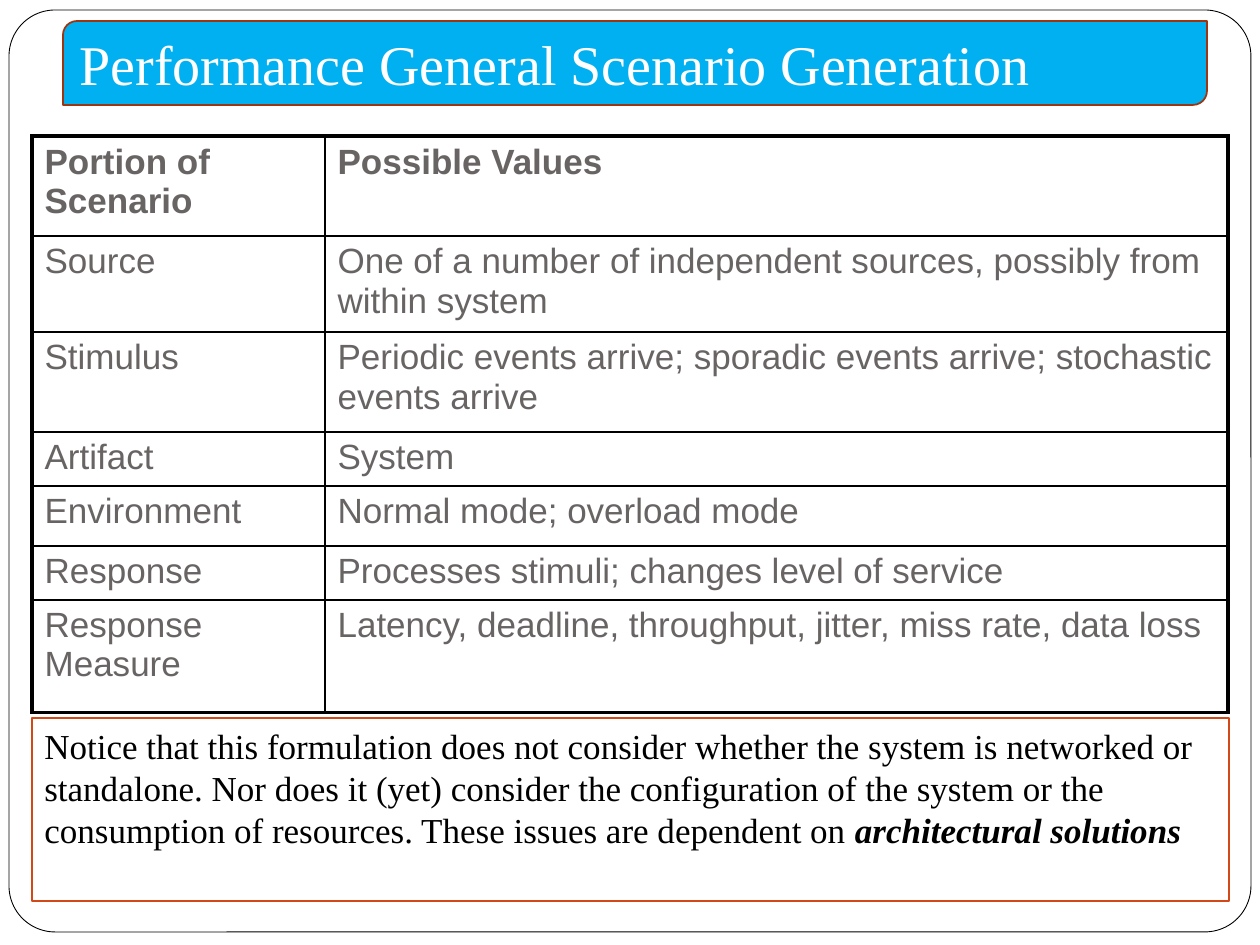
import pptx
import pptx.util
import pptx.dml.color
import pptx.enum.shapes
import pptx.enum.text
import pptx.oxml
import pptx.oxml.ns

RGB = pptx.dml.color.RGBColor
BLACK = RGB(0x00, 0x00, 0x00)
WHITE = RGB(0xFF, 0xFF, 0xFF)
GREY = RGB(0x69, 0x64, 0x64)
BLUE = RGB(0x00, 0xB0, 0xF0)
RUST = RGB(0x9C, 0x35, 0x11)
ORANGE = RGB(0xD3, 0x48, 0x17)
SERIF = "Times New Roman"
SANS = "Arial"
KINDS = pptx.enum.shapes.MSO_SHAPE
ANCHOR = pptx.enum.text.MSO_ANCHOR

ROWS = [
    (100, "Portion of Scenario", "Possible Values"),
    (96, "Source", "One of a number of independent sources, possibly from within system"),
    (100, "Stimulus", "Periodic events arrive; sporadic events arrive; stochastic events arrive"),
    (54, "Artifact", "System"),
    (60, "Environment", "Normal mode; overload mode"),
    (54, "Response", "Processes stimuli; changes level of service"),
    (113, "Response Measure", "Latency, deadline, throughput, jitter, miss rate, data loss"),
]
NOTE = (
    "Notice that this formulation does not consider whether the system is networked or "
    "standalone. Nor does it (yet) consider the configuration of the system or the "
    "consumption of resources. These issues are dependent on "
)


def px(num):
    return pptx.util.Emu(num * 914400 // 126)


class Deck:
    def __init__(self, wide, high):
        self.show = pptx.Presentation()
        self.show.slide_width = px(wide)
        self.show.slide_height = px(high)
        self.slide = self.show.slides.add_slide(self.show.slide_layouts[6])

    def shape(self, kind, box, fill, line, width):
        shape = self.slide.shapes.add_shape(kind, *map(px, box))
        shape.shadow.inherit = False
        if fill is None:
            shape.fill.background()
        else:
            shape.fill.solid()
            shape.fill.fore_color.rgb = fill
        shape.line.color.rgb = line
        shape.line.width = pptx.util.Pt(width)
        return shape

    def run(self, para, text, face, size, color, bold=False, slant=False):
        para.alignment = pptx.enum.text.PP_ALIGN.LEFT
        run = para.add_run()
        run.text = text
        font = run.font
        font.name = face
        font.size = pptx.util.Pt(size)
        font.color.rgb = color
        font.bold = bold
        font.italic = slant

    def label(self, shape, anchor, *parts):
        frame = shape.text_frame
        frame.word_wrap = True
        frame.vertical_anchor = anchor
        for part in parts:
            self.run(frame.paragraphs[0], *part)

    def edge(self, cell, sides):
        props = cell._tc.get_or_add_tcPr()
        for spot, (side, width) in enumerate(sides.items()):
            line = pptx.oxml.parse_xml(
                f'<a:ln{side} {pptx.oxml.ns.nsdecls("a")} w="{pptx.util.Pt(width)}">'
                f'<a:solidFill><a:srgbClr val="{BLACK}"/></a:solidFill></a:ln{side}>'
            )
            props.insert(spot, line)

    def table(self, left, top, cols, rows, thin, thick):
        high = sum(row[0] for row in rows)
        box = map(px, (left, top, sum(cols), high))
        table = self.slide.shapes.add_table(len(rows), len(cols), *box).table
        table.first_row = table.horz_banding = False
        for col, wide in zip(table.columns, cols):
            col.width = px(wide)
        for r, (tall, *texts) in enumerate(rows):
            table.rows[r].height = px(tall)
            for c, text in enumerate(texts):
                cell = table.cell(r, c)
                cell.fill.background()
                self.run(cell.text_frame.paragraphs[0], text, SANS, 20, GREY, r == 0)
                outer = {
                    "L": c == 0,
                    "R": c == len(cols) - 1,
                    "T": r == 0,
                    "B": r == len(rows) - 1,
                }
                self.edge(cell, {k: thick if v else thin for k, v in outer.items()})


def main():
    deck = Deck(1260, 945)
    frame = deck.shape(KINDS.ROUNDED_RECTANGLE, (9, 10, 1242, 922), WHITE, BLACK, 0.5)
    frame.adjustments[0] = 0.05
    deck.table(32, 136, (293, 903), ROWS, 1, 2.25)
    title = deck.shape(KINDS.ROUND_2_DIAG_RECTANGLE, (63, 21, 1144, 84), BLUE, RUST, 1)
    deck.label(
        title, ANCHOR.MIDDLE, ("Performance General Scenario Generation", SERIF, 32, WHITE)
    )
    note = deck.shape(KINDS.RECTANGLE, (32, 718, 1197, 183), None, ORANGE, 0.75)
    deck.label(
        note,
        ANCHOR.TOP,
        (NOTE, SERIF, 20, BLACK),
        ("architectural solutions", SERIF, 20, BLACK, True, True),
    )
    deck.show.save("out.pptx")


if __name__ == "__main__":
    main()
